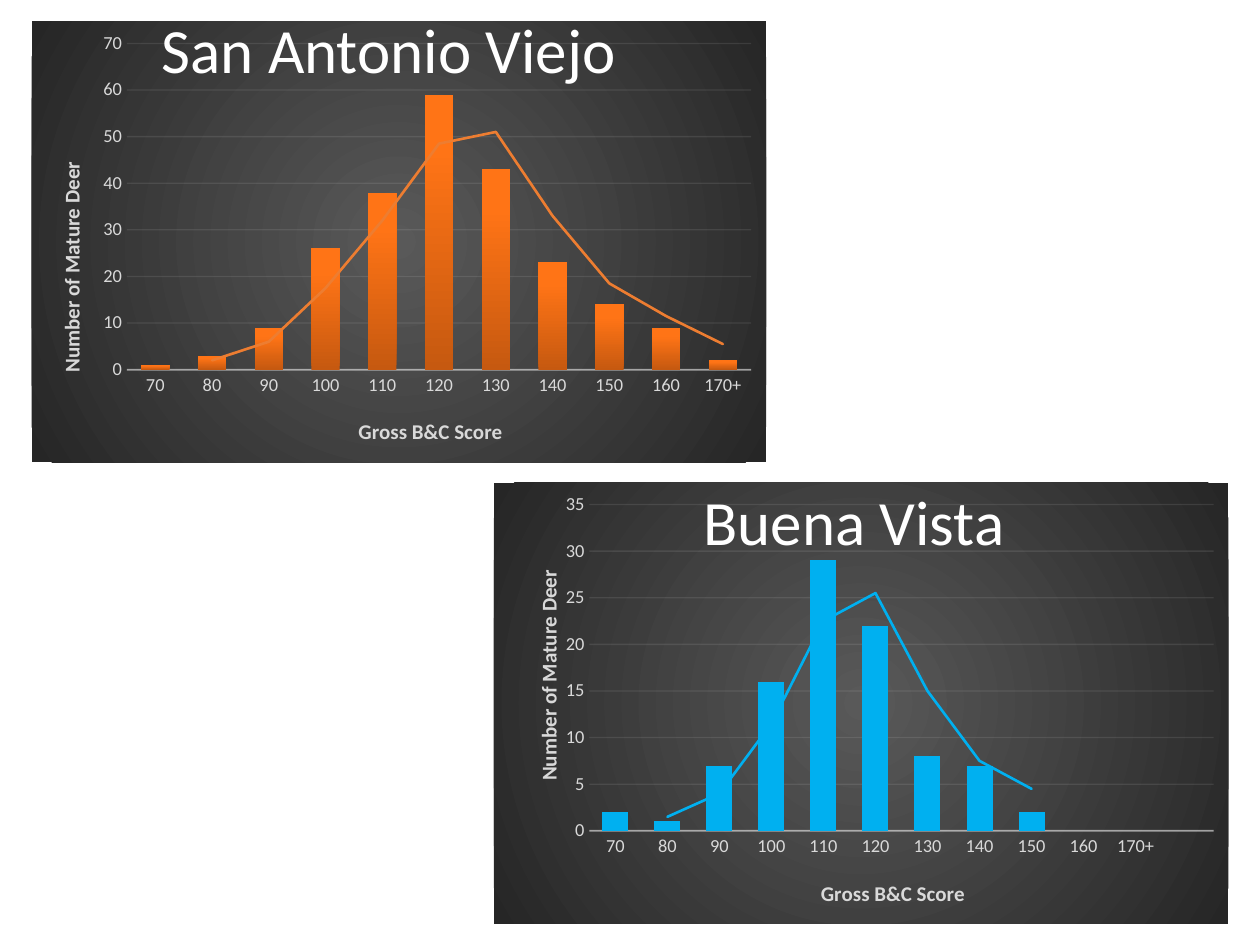
from lxml.etree import SubElement
from pptx import Presentation
from pptx.chart.data import CategoryChartData
from pptx.dml.color import RGBColor
from pptx.enum.chart import XL_CHART_TYPE, XL_TICK_MARK
from pptx.enum.text import MSO_ANCHOR, PP_ALIGN
from pptx.oxml import parse_xml
from pptx.oxml.ns import nsdecls, qn
from pptx.util import Inches, Pt

FONT = "Calibri"
WHITE = RGBColor(0xFF, 0xFF, 0xFF)
LABEL = RGBColor(0xD9, 0xD9, 0xD9)
RULE = RGBColor(0xF2, 0xF2, 0xF2)
BLUE = RGBColor(0x00, 0xB0, 0xF0)
ORANGE = RGBColor(0xED, 0x7D, 0x31)
BACKDROP = [(0, RGBColor(0x59, 0x59, 0x59)), (100, RGBColor(0x26, 0x26, 0x26))]
ORANGE_BARS = [(0, RGBColor(0xC6, 0x59, 0x10)), (80, RGBColor(0xFF, 0x74, 0x16)),
               (100, RGBColor(0xFF, 0x75, 0x17))]
RADIAL = ('<a:path path="circle"><a:fillToRect l="50000" t="50000" '
          'r="50000" b="50000"/></a:path>')
UPWARD = '<a:lin ang="16200000" scaled="0"/>'
SCORES = ["70", "80", "90", "100", "110", "120", "130", "140", "150", "160", "170+"]


def gradient(stops, direction):
    gs = "".join(f'<a:gs pos="{pos * 1000}"><a:srgbClr val="{color}"/></a:gs>'
                 for pos, color in stops)
    return parse_xml(f'<a:gradFill {nsdecls("a")} rotWithShape="1">'
                     f'<a:gsLst>{gs}</a:gsLst>{direction}</a:gradFill>')


def set_layout(parent, index, **values):
    """Place a chart part by fractions of the chart's size."""
    for old in parent.findall(qn("c:layout")):
        parent.remove(old)
    modes = {"xMode": "edge", "yMode": "edge", **values}
    if "w" in values:
        modes = {"layoutTarget": "inner", **modes}
    layout = parse_xml(f'<c:layout {nsdecls("c")}><c:manualLayout/></c:layout>')
    for tag, value in modes.items():
        SubElement(layout[0], qn(f"c:{tag}")).set("val", str(value))
    parent.insert(index, layout)


def set_alpha(color_element, percent):
    SubElement(color_element, qn("a:alpha")).set("val", str(percent * 1000))


def style_axis(axis, title, x, y):
    axis.major_tick_mark = axis.minor_tick_mark = XL_TICK_MARK.NONE
    labels = axis.tick_labels.font
    labels.name, labels.size, labels.color.rgb = FONT, Pt(10.5), LABEL
    axis_title = axis.axis_title
    p = axis_title.text_frame.paragraphs[0]
    p.add_run().text = title
    p.font.name, p.font.size, p.font.bold = FONT, Pt(12), True
    p.font.color.rgb = LABEL
    set_layout(axis_title.element, 1, x=x, y=y)
    return axis_title


def add_moving_average(ser, color):
    trend = parse_xml(
        f'<c:trendline {nsdecls("c", "a")}><c:spPr><a:ln w="{Pt(1.5)}" cap="rnd">'
        f'<a:solidFill><a:srgbClr val="{color}"/></a:solidFill></a:ln></c:spPr>'
        '<c:trendlineType val="movingAvg"/><c:period val="2"/>'
        '<c:dispRSqr val="0"/><c:dispEq val="0"/></c:trendline>')
    ser.find(qn("c:cat")).addprevious(trend)


def add_histogram(s, left, top, scores, counts, color, maximum, unit, title_at):
    """Add a column chart with its moving average and return the series element."""
    data = CategoryChartData()
    data.categories = scores
    data.add_series("Series 1", counts)
    chart = s.shapes.add_chart(XL_CHART_TYPE.COLUMN_CLUSTERED, Inches(left),
                               Inches(top), Inches(5.83), Inches(3.5), data).chart
    chart.has_title = chart.has_legend = False
    chart.font.name, chart.font.size = FONT, Pt(10)
    backdrop = parse_xml(f'<c:spPr {nsdecls("c", "a")}><a:ln><a:noFill/></a:ln></c:spPr>')
    backdrop.insert(0, gradient(BACKDROP, RADIAL))
    chart.element.find(qn("c:chart")).addnext(backdrop)
    set_layout(chart.element.xpath(".//c:plotArea")[0], 0,
               x=0.13, y=0.05, w=0.85, h=0.74)

    cat = chart.category_axis
    style_axis(cat, "Gross B&C Score", 0.44, 0.89)
    cat.format.line.width = Pt(1)
    cat.format.line.color.rgb = RULE
    set_alpha(chart.element.xpath(".//c:catAx/c:spPr//a:srgbClr")[0], 54)

    val = chart.value_axis
    val.minimum_scale, val.maximum_scale, val.major_unit = 0, maximum, unit
    title = style_axis(val, "Number of Mature Deer", *title_at)
    body = title.element.find(".//" + qn("a:bodyPr"))
    body.set("rot", "-5400000")
    body.set("vert", "horz")
    val.format.line.fill.background()
    grid = val.major_gridlines.format.line
    grid.width, grid.color.rgb = Pt(0.75), RULE
    set_alpha(chart.element.xpath(".//c:majorGridlines//a:srgbClr")[0], 10)

    plot = chart.plots[0]
    plot.gap_width, plot.overlap, plot.vary_by_categories = 100, -24, False
    series = plot.series[0]
    series.invert_if_negative = False
    series.format.fill.solid()
    series.format.fill.fore_color.rgb = color
    ser = chart.element.xpath(".//c:ser")[0]
    add_moving_average(ser, color)
    return ser


def add_heading(s, text, left, top, width):
    box = s.shapes.add_textbox(Inches(left), Inches(top), Inches(width), Inches(0.92))
    tf = box.text_frame
    tf.word_wrap = True
    tf.vertical_anchor = MSO_ANCHOR.MIDDLE
    p = tf.paragraphs[0]
    p.text = text
    p.alignment = PP_ALIGN.CENTER
    p.font.name, p.font.size, p.font.color.rgb = FONT, Pt(36), WHITE


def main():
    prs = Presentation()
    prs.slide_width, prs.slide_height = Inches(10), Inches(7.5)
    s = prs.slides.add_slide(prs.slide_layouts[6])
    # The blank last score leaves an empty slot at the right of the plot.
    add_histogram(s, 3.92, 3.83, SCORES + [""],
                  [2, 1, 7, 16, 29, 22, 8, 7, 2, None, None, None],
                  BLUE, 35, 5, (0.05, 0.19))
    orange = add_histogram(s, 0.25, 0.17, SCORES,
                           [1, 3, 9, 26, 38, 59, 43, 23, 14, 9, 2],
                           ORANGE, 70, 10, (0.03, 0.31))
    solid = orange.find(qn("c:spPr")).find(qn("a:solidFill"))
    solid.getparent().replace(solid, gradient(ORANGE_BARS, UPWARD))
    add_heading(s, "Buena Vista ", 4.75, 3.67, 4.17)
    add_heading(s, "San Antonio Viejo", 0.67, -0.08, 4.83)
    prs.save("out.pptx")


if __name__ == "__main__":
    main()
